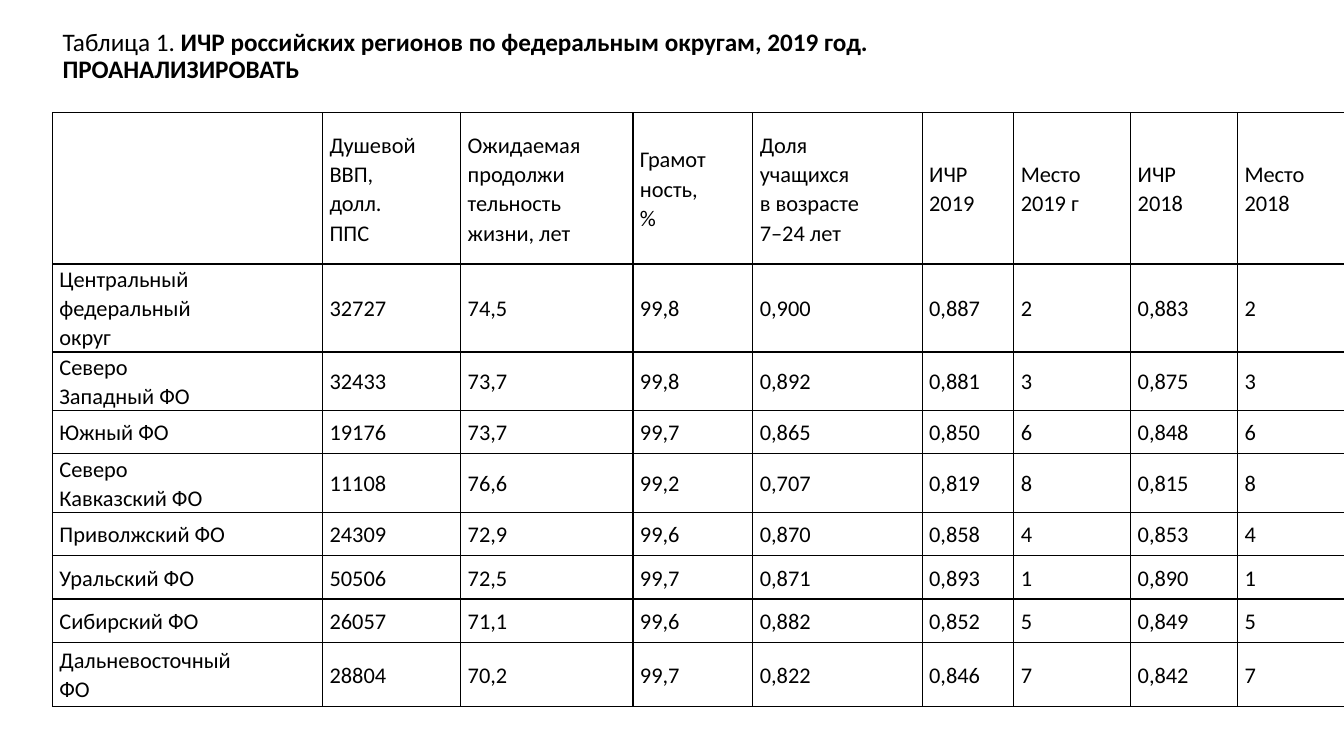
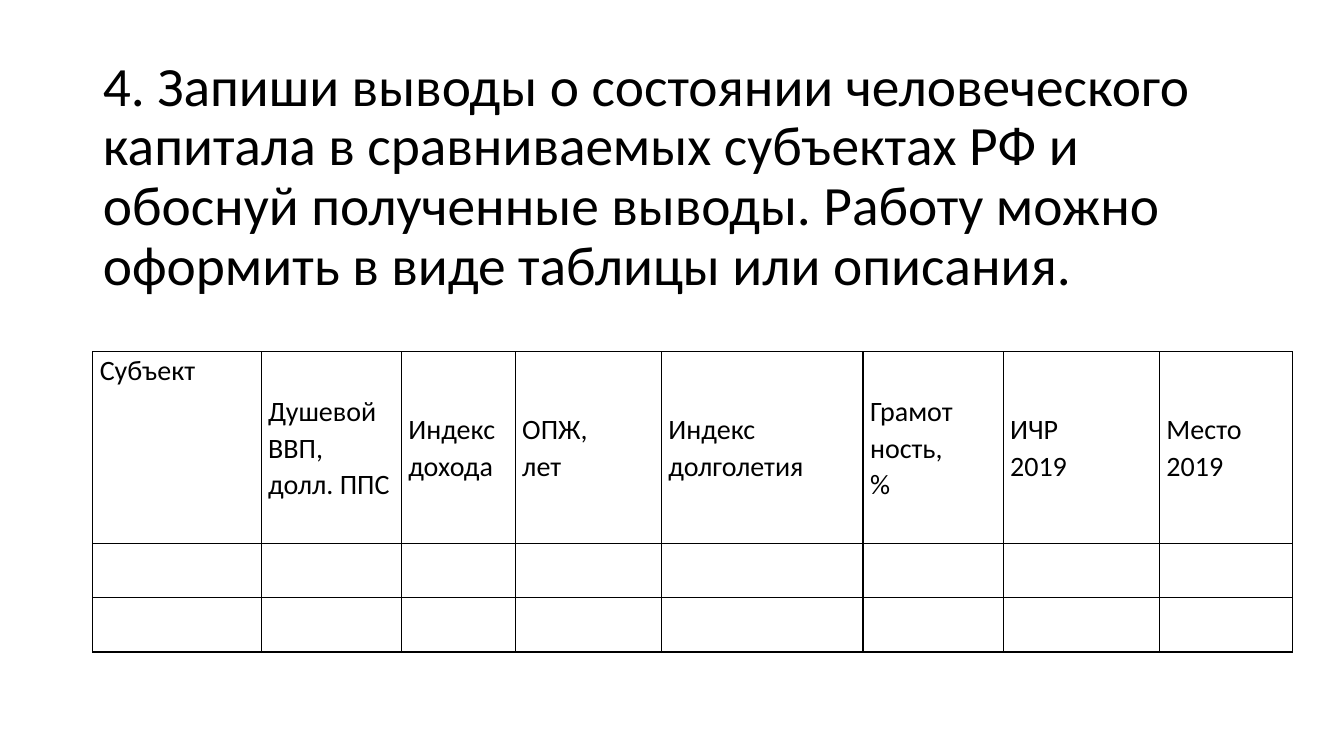
from copy import deepcopy
from lxml.etree import SubElement as Sub
from pptx import Presentation
from pptx.dml.color import RGBColor
from pptx.enum.text import MSO_ANCHOR as Anchor, MSO_AUTO_SIZE as Fit, PP_ALIGN as Align
from pptx.oxml.ns import qn
from pptx.util import Inches, Pt

INK = "000000"
SIDES = ("lnL", "lnR", "lnT", "lnB")
CELL = dict(margin_left=Inches(0.07), margin_right=Inches(0.07),
            margin_top=0, margin_bottom=0)
BODY = dict(line_spacing=1.07, space_after=Pt(8))
HEAD = dict(line_spacing=0.9, alignment=Align.LEFT)

deck = Presentation()
deck.slide_width, deck.slide_height = 12192000, 6858000
W, H = deck.slide_width / 100, deck.slide_height / 100


def write(para, size, looks, *parts):
    """Fill a paragraph with (text, bold) parts; line breaks keep the text size."""
    for name, value in looks.items():
        setattr(para, name, value)
    for text, bold in parts:
        for i, line in enumerate(text.split("\n")):
            if i:
                para.add_line_break()
            run = para.add_run()
            run.text = line
            font = run.font
            font.name, font.size, font.bold = "Calibri", Pt(size), bold
            font.color.rgb = RGBColor.from_string(INK)
    for gap in para._p.findall(qn("a:br")):
        gap.insert(0, deepcopy(run._r.rPr))


def frame(cell):
    """Clear the fill of a cell and rule its four sides."""
    cell.fill.background()
    props = cell._tc.get_or_add_tcPr()
    for i, side in enumerate(SIDES):
        line = Sub(props, qn(f"a:{side}"), w=str(Pt(1)))
        Sub(Sub(line, qn("a:solidFill")), qn("a:srgbClr"), val=INK)
        props.insert(i, line)


areas = [
    ["", "Душевой\nВВП,\nдолл.\nППС", "Ожидаемая\nпродолжи\nтельность\nжизни, лет",
     "Грамот\nность,\n%", "Доля\nучащихся\nв возрасте\n7–24 лет",
     "ИЧР\n2019", "Место\n2019 г", "ИЧР\n2018", "Место\n2018"],
    ["Центральный\nфедеральный\nокруг", "32727", "74,5", "99,8", "0,900", "0,887", "2", "0,883", "2"],
    ["Северо\nЗападный ФО", "32433", "73,7", "99,8", "0,892", "0,881", "3", "0,875", "3"],
    ["Южный ФО", "19176", "73,7", "99,7", "0,865", "0,850", "6", "0,848", "6"],
    ["Северо\nКавказский ФО", "11108", "76,6", "99,2", "0,707", "0,819", "8", "0,815", "8"],
    ["Приволжский ФО", "24309", "72,9", "99,6", "0,870", "0,858", "4", "0,853", "4"],
    ["Уральский ФО", "50506", "72,5", "99,7", "0,871", "0,893", "1", "0,890", "1"],
    ["Сибирский ФО", "26057", "71,1", "99,6", "0,882", "0,852", "5", "0,849", "5"],
    ["Дальневосточный\nФО", "28804", "70,2", "99,7", "0,822", "0,846", "7", "0,842", "7"],
]
blank = [
    ["Субъект", "Душевой\nВВП,\nдолл. ППС", "Индекс\nдохода", "ОПЖ,\nлет",
     "Индекс\nдолголетия", "Грамот\nность,\n%", "ИЧР\n2019", "Место\n2019"],
    [""] * 8,
    [""] * 8,
]

# Places and sizes are percentages of the slide's width and height.
pages = [
    dict(left=3.9, top=-2.13, size=18,
         title=[("Таблица 1. ", False),
                ("ИЧР российских регионов по федеральным округам, 2019 год.\nПРОАНАЛИЗИРОВАТЬ", True)],
         grid=areas, start=14.93, small=16,
         cols=[20.1, 10.28, 12.82, 8.92, 12.6, 6.82, 8.7, 7.95, 7.95],
         rows=[20, 10.67, 7.07, 5.73, 7.07, 5.73, 5.73, 5.73, 8.53]),
    dict(left=6.9, top=13.87, size=39.6,
         title=[("4. Запиши выводы о состоянии человеческого капитала в сравниваемых "
                 "субъектах РФ и обоснуй полученные выводы. Работу можно оформить "
                 "в виде таблицы или описания.", False)],
         grid=blank, start=46.53, small=20,
         cols=[12.53, 10.43, 8.48, 10.88, 15, 10.43, 11.63, 9.9],
         rows=[25.33, 7.2, 7.2]),
]

for page in pages:
    slide = deck.slides.add_slide(deck.slide_layouts[5])
    title = slide.shapes.title
    left = int(page["left"] * W)
    title.left, title.top = left, int(page["top"] * H)
    title.width, title.height = int(86.25 * W), int(19.33 * H)
    text = title.text_frame
    text.auto_size, text.vertical_anchor, text.word_wrap = Fit.NONE, Anchor.MIDDLE, True
    write(text.paragraphs[0], page["size"], HEAD, *page["title"])

    cols, rows, grid = page["cols"], page["rows"], page["grid"]
    table = slide.shapes.add_table(len(rows), len(cols), left, int(page["start"] * H),
                                   int(sum(cols) * W), int(sum(rows) * H)).table
    table.first_row = table.horz_banding = False
    for col, share in zip(table.columns, cols):
        col.width = int(share * W)
    for row, share, words in zip(table.rows, rows, grid):
        row.height = int(share * H)
        for cell, word in zip(row.cells, words):
            frame(cell)
            if word:
                for name, value in CELL.items():
                    setattr(cell, name, value)
                cell.vertical_anchor = Anchor.TOP if word == "Субъект" else Anchor.MIDDLE
                write(cell.text_frame.paragraphs[0], page["small"], BODY, (word, False))

deck.save("out.pptx")
